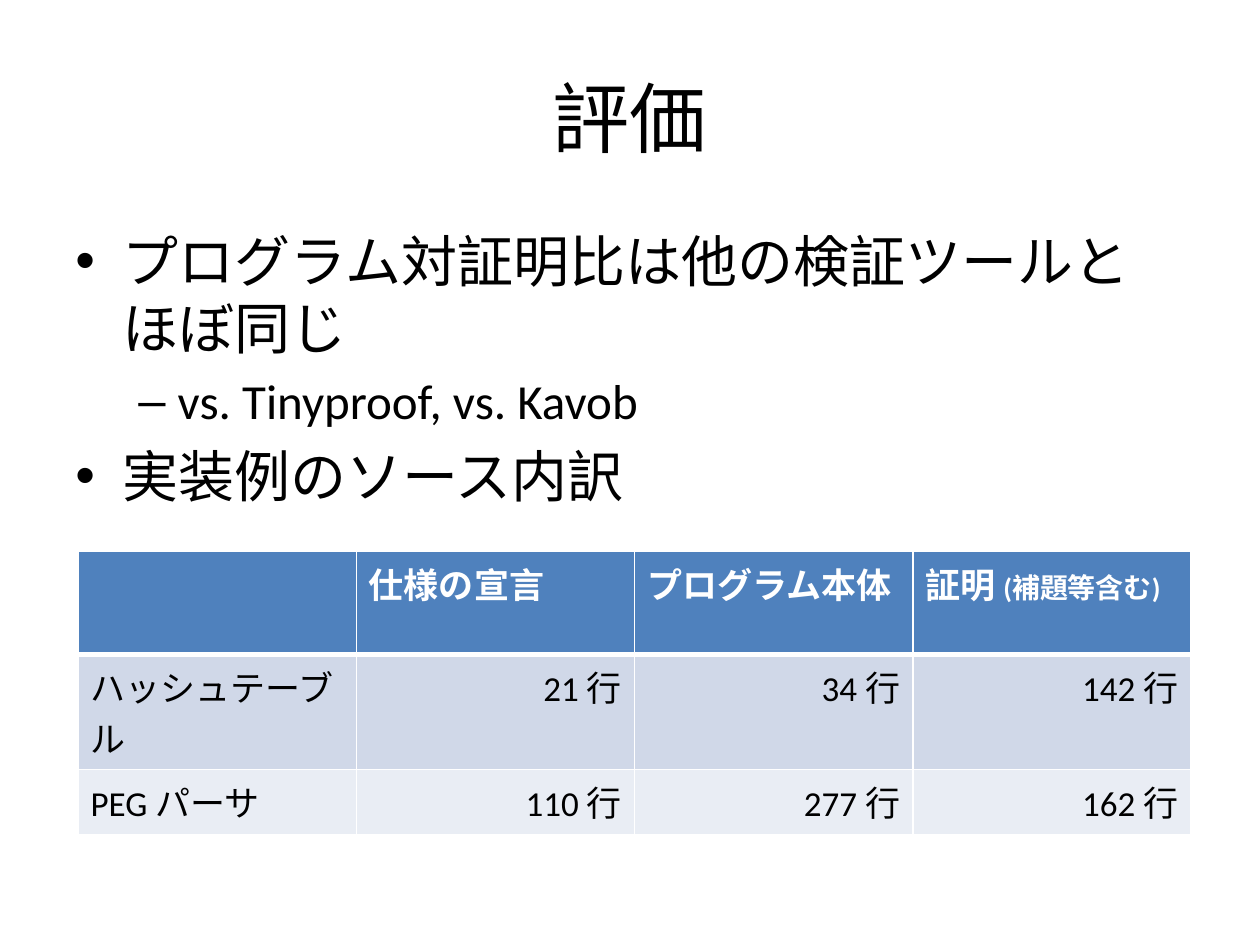
import pptx
import pptx.dml.color
import pptx.enum.text
import pptx.oxml
import pptx.oxml.ns
import pptx.util

Pt = pptx.util.Pt
Color = pptx.dml.color.RGBColor
Align = pptx.enum.text.PP_ALIGN
Anchor = pptx.enum.text.MSO_ANCHOR

BLACK = Color(0x00, 0x00, 0x00)
WHITE = Color(0xFF, 0xFF, 0xFF)
HEADER_BLUE = Color(0x4F, 0x81, 0xBD)
BAND_DARK = Color(0xD0, 0xD8, 0xE8)
BAND_LIGHT = Color(0xE9, 0xED, 0xF4)

FONT = "Calibri"
BULLET_LEVELS = [
    {"marL": 27, "indent": -27, "symbol": "•", "size": 32},
    {"marL": 58.5, "indent": -22.5, "symbol": "–", "size": 28},
]
BULLETS = [
    (0, "プログラム対証明比は他の検証ツールと\vほぼ同じ"),
    (1, "vs. Tinyproof, vs. Kavob"),
    (0, "実装例のソース内訳"),
]
TABLE_ROWS = [
    [[], [("仕様の宣言", 20)], [("プログラム本体", 20)], [("証明 ", 20), ("(補題等含む)", 16)]],
    [[(text, 20)] for text in ("ハッシュテーブル", "21 行", "34 行", "142 行")],
    [[(text, 20)] for text in ("PEG パーサ", "110 行", "277 行", "162 行")],
]
ROW_FILLS = [HEADER_BLUE, BAND_DARK, BAND_LIGHT]
ROW_SHARES = [0.365, 0.405, 0.23]


def format_font(font, size, color=BLACK, bold=False):
    font.color.rgb = color
    for name, value in {"name": FONT, "size": Pt(size), "bold": bold}.items():
        setattr(font, name, value)


def place_title(slide, box, text):
    title = slide.shapes.title
    for name, value in zip(("left", "top", "width", "height"), box):
        setattr(title, name, Pt(value))
    frame = title.text_frame
    frame.text = text
    frame.vertical_anchor = Anchor.MIDDLE
    paragraph = frame.paragraphs[0]
    paragraph.alignment = Align.CENTER
    format_font(paragraph.runs[0].font, 44)


def format_bullet(paragraph, level):
    style = BULLET_LEVELS[level]
    paragraph.level = level
    properties = paragraph._p.get_or_add_pPr()
    for name in ("marL", "indent"):
        properties.set(name, str(int(Pt(style[name]))))
    namespace = pptx.oxml.ns.nsdecls("a")
    for xml in (
        f'<a:spcBef {namespace}><a:spcPct val="20000"/></a:spcBef>',
        f'<a:buFont {namespace} typeface="Arial"/>',
        f'<a:buChar {namespace} char="{style["symbol"]}"/>',
    ):
        properties.append(pptx.oxml.parse_xml(xml))
    for run in paragraph.runs:
        format_font(run.font, style["size"])


def place_bullets(slide, box, bullets):
    frame = slide.shapes.add_textbox(*map(Pt, box)).text_frame
    frame.word_wrap = True
    for index, (level, text) in enumerate(bullets):
        paragraph = frame.add_paragraph() if index else frame.paragraphs[0]
        paragraph.text = text
        format_bullet(paragraph, level)


def format_borders(cell, bottom, top):
    properties = cell._tc.get_or_add_tcPr()
    widths = {"lnL": 1, "lnR": 1, "lnT": top, "lnB": bottom}
    for position, (tag, width) in enumerate(widths.items()):
        properties.insert(position, pptx.oxml.parse_xml(
            f'<a:{tag} {pptx.oxml.ns.nsdecls("a")} w="{int(Pt(width))}">'
            f'<a:solidFill><a:srgbClr val="{WHITE}"/></a:solidFill></a:{tag}>'
        ))


def fill_cell(cell, runs, row, column):
    header = row == 0
    cell.fill.solid()
    cell.fill.fore_color.rgb = ROW_FILLS[row]
    format_borders(cell, bottom=3 if header else 1, top=3 if row == 1 else 1)
    paragraph = cell.text_frame.paragraphs[0]
    if not header and column:
        paragraph.alignment = Align.RIGHT
    for text, size in runs:
        run = paragraph.add_run()
        run.text = text
        format_font(run.font, size, WHITE if header else BLACK, header)


def place_table(slide, box, rows):
    table = slide.shapes.add_table(len(rows), len(rows[0]), *map(Pt, box)).table
    for row, cells in enumerate(rows):
        table.rows[row].height = Pt(box[3] * ROW_SHARES[row])
        for column, runs in enumerate(cells):
            fill_cell(table.cell(row, column), runs, row, column)


def main():
    presentation = pptx.Presentation()
    presentation.slide_width = Pt(720)
    presentation.slide_height = Pt(540)
    slide = presentation.slides.add_slide(presentation.slide_layouts[5])
    place_title(slide, (36, 21.6, 648, 90), "評価")
    place_bullets(slide, (36, 126, 648, 356.4), BULLETS)
    place_table(slide, (44.6, 315.2, 636, 161.6), TABLE_ROWS)
    presentation.save("out.pptx")


if __name__ == "__main__":
    main()
